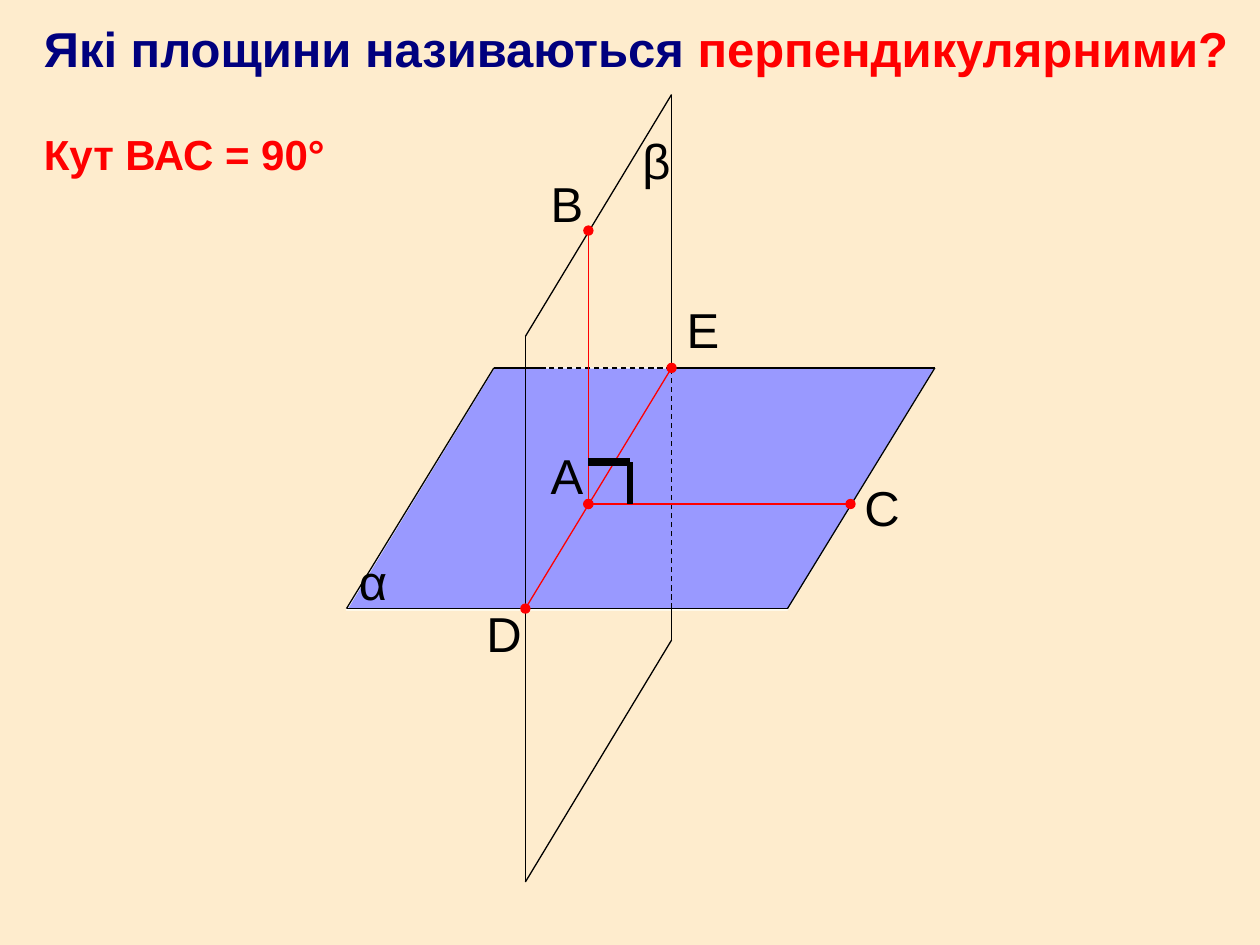
from lxml import etree
from pptx import Presentation
from pptx.dml.color import RGBColor
from pptx.enum.dml import MSO_LINE
from pptx.enum.shapes import MSO_CONNECTOR, MSO_SHAPE
from pptx.enum.text import MSO_ANCHOR, PP_ALIGN
from pptx.oxml.ns import qn
from pptx.util import Inches, Pt

COLORS = {"page": "FEECCD", "plane": "9999FF", "plane_edge": "FFFFF7",
          "black": "000000", "red": "FF0000", "navy": "00007E"}

# Points of the drawing, in inches from the corner of its box
POINTS = {
    "front_left": (0, 4.08), "front_right": (3.5, 4.08),
    "back_left": (1.17, 2.17), "back_right": (4.67, 2.17),
    "hidden_start": (1.58, 2.17), "hidden_foot": (2.58, 4.08),
    "top_near": (1.42, 1.92), "top_far": (2.58, 0),
    "bottom_near": (1.42, 6.25), "bottom_far": (2.58, 4.33),
    "A": (1.92, 3.25), "B": (1.92, 1.08), "C": (4, 3.25),
    "D": (1.42, 4.08), "E": (2.58, 2.17),
    "mark_left": (1.92, 2.92), "mark_corner": (2.25, 2.92),
    "mark_foot": (2.25, 3.25),
}

# Kind of line: format values and the pairs of points it joins
LINES = [
    ({"color": "black", "width": 0.75}, [
        ("D", "top_near"), ("E", "top_far"), ("top_near", "top_far"),
        ("bottom_near", "bottom_far"), ("bottom_near", "D"),
        ("bottom_far", "hidden_foot"), ("front_left", "front_right"),
        ("front_left", "back_left"), ("E", "back_right"),
        ("front_right", "back_right"), ("hidden_start", "back_left")]),
    ({"color": "black", "width": 0.75, "dash": MSO_LINE.DASH}, [
        ("hidden_foot", "E"), ("E", "hidden_start")]),
    ({"color": "red", "width": 0.75, "ends": "oval"}, [
        ("D", "E"), ("B", "A"), ("A", "C")]),
    ({"color": "black", "width": 4.5}, [("mark_left", "mark_corner")]),
    ({"color": "black", "width": 3}, [("mark_corner", "mark_foot")]),
]

# Letter: left, top, width, height in inches from the corner of the box
LABELS = {
    "А": (1.5, 2.83, 0.5, 0.5), "Е": (2.58, 1.67, 0.5, 0.5),
    "С": (4, 3.08, 0.5, 0.5), "В": (1.5, 0.67, 0.5, 0.5),
    "D": (1, 4.08, 0.5, 0.5), "α": (0, 3.67, 0.33, 0.25),
    "β": (2.25, 0.33, 0.42, 0.33),
}
LABEL_FORMAT = {"alignment": PP_ALIGN.CENTER, "line_spacing": 0.8,
                "space_before": Pt(5.6)}


def rgb(name):
    return RGBColor.from_string(COLORS[name])


def add_text(page, box, spans, size, bold=False, para_format=None):
    """Write one paragraph of (text, colour) spans in the box."""
    frame = page.shapes.add_textbox(*map(Inches, box)).text_frame
    frame.word_wrap = True
    frame.vertical_anchor = MSO_ANCHOR.TOP
    para = frame.paragraphs[0]
    for key, value in (para_format or {}).items():
        setattr(para, key, value)
    for text, color in spans:
        span = para.add_run()
        span.text = text
        for key, value in {"name": "Arial", "size": Pt(size), "bold": bold}.items():
            setattr(span.font, key, value)
        span.font.color.rgb = rgb(color)


def add_line(page, start, end, color, width, dash=None, ends=None):
    line = page.shapes.add_connector(
        MSO_CONNECTOR.STRAIGHT, *map(Inches, (*start, *end)))
    line.line.color.rgb = rgb(color)
    line.line.width = Pt(width)
    if dash:
        line.line.dash_style = dash
    if ends:
        outline = line.line._get_or_add_ln()
        for tag in ("a:headEnd", "a:tailEnd"):
            etree.SubElement(outline, qn(tag), type=ends)
    etree.SubElement(line._element.spPr, qn("a:effectLst"))


def add_heading(page, left, top, width):
    """Question, with the condition below it."""
    add_text(page, (left, top, width, 0.55),
             [("Які площини називаються", "navy"),
              (" перпендикулярними?", "red")], 28, bold=True)
    add_text(page, (left, top + 0.87, width, 0.48),
             [("Кут ВАС = 90°", "red")], 24, bold=True)


def add_planes(page, left, top):
    """Two planes at a right angle, with their lines and letters."""
    def place(name):
        x, y = POINTS[name]
        return left + x, top + y

    # Horizontal plane
    plane = page.shapes.add_shape(
        MSO_SHAPE.PARALLELOGRAM, Inches(left), Inches(top + 2.17),
        Inches(4.67), Inches(1.92))
    plane.adjustments[0] = 0.61
    plane.shadow.inherit = False
    plane.fill.solid()
    plane.fill.fore_color.rgb = rgb("plane")
    plane.line.color.rgb = rgb("plane_edge")
    plane.line.width = Pt(0.75)

    # Edges, segments and right-angle mark
    for line_format, pairs in LINES:
        for start, end in pairs:
            add_line(page, place(start), place(end), **line_format)

    # Letters
    for letter, (x, y, width, height) in LABELS.items():
        add_text(page, (left + x, top + y, width, height),
                 [(letter, "black")], 28, para_format=LABEL_FORMAT)


def main():
    deck = Presentation()
    deck.slide_width, deck.slide_height = Inches(10), Inches(7.5)
    page = deck.slides.add_slide(deck.slide_layouts[6])
    page.background.fill.solid()
    page.background.fill.fore_color.rgb = rgb("page")
    add_heading(page, 0.25, 0.1, 9.75)
    add_planes(page, 2.75, 0.75)
    deck.save("out.pptx")


if __name__ == "__main__":
    main()
